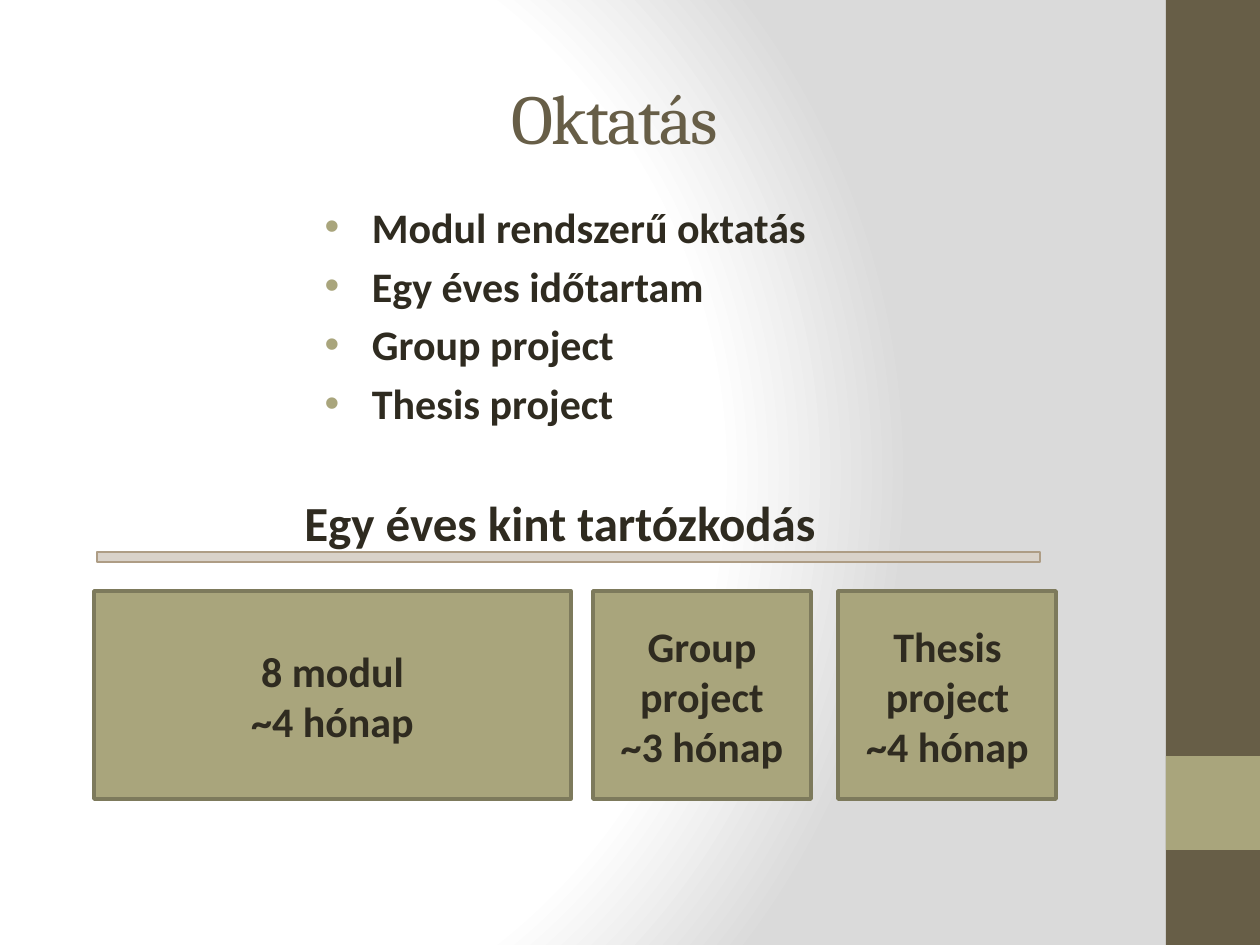
from lxml import etree
from pptx import Presentation, util as u
from pptx.dml.color import RGBColor
from pptx.enum import shapes, text
from pptx.oxml import parse_xml
from pptx.oxml.ns import nsdecls, qn

PX = 914400 / 126
HUE = {"brown": "675E47", "olive": "A9A57C", "edge": "7D7A5C", "ink": "2F2B20",
       "bar": "D9D2C9", "rim": "AE9D85", "white": "FFFFFF", "gray": "DADADA"}


def block(box, fill, line=None, width=0):
    rect = slide.shapes.add_shape(shapes.MSO_SHAPE.RECTANGLE, *[round(v * PX) for v in box])
    rect.shadow.inherit = False
    rect.fill.solid()
    rect.fill.fore_color.rgb = RGBColor.from_string(HUE[fill])
    if line:
        rect.line.color.rgb = RGBColor.from_string(HUE[line])
        rect.line.width = u.Pt(width)
    else:
        rect.line.fill.background()


def write(shape, box, lines, size, align, face="Calibri", hue="ink", bold=True):
    shape.left, shape.top, shape.width, shape.height = [round(v * PX) for v in box]
    frame = shape.text_frame
    frame.word_wrap = True
    for i, line in enumerate(lines):
        para = frame.paragraphs[0] if i == 0 else frame.add_paragraph()
        para.alignment = align
        run = para.add_run()
        run.text = line
        font = run.font
        font.name, font.size, font.bold = face, u.Pt(size), bold
        font.color.rgb = RGBColor.from_string(HUE[hue])
    return frame


deck = Presentation()
deck.slide_width, deck.slide_height = round(1260 * PX), round(945 * PX)
slide = deck.slides.add_slide(deck.slide_layouts[0])
left, mid = text.PP_ALIGN.LEFT, text.PP_ALIGN.CENTER

stops = "".join(f'<a:gs pos="{pos}"><a:srgbClr val="{HUE[hue]}"/></a:gs>'
                for pos, hue in ((0, "white"), (75000, "white"), (100000, "gray")))
slide.background.fill.solid()
back = slide.background.fill._xPr
back.replace(back.find(qn("a:solidFill")), parse_xml(
    f'<a:gradFill {nsdecls("a")} rotWithShape="1"><a:gsLst>{stops}</a:gsLst>'
    '<a:path path="circle"><a:fillToRect l="20000" t="50000" r="100000" b="50000"/></a:path>'
    '</a:gradFill>'))

title, body = slide.placeholders
frame = write(title, (95, 37, 1039, 128), ["Oktatás"], 40, mid, "Cambria", "brown", False)
frame.vertical_anchor = text.MSO_ANCHOR.BOTTOM
frame.auto_size = text.MSO_AUTO_SIZE.NONE
frame.paragraphs[0].runs[0].font._element.set("spc", "-100")

items = ["Modul rendszerű oktatás", "Egy éves időtartam", "Group project", "Thesis project"]
frame = write(body, (312, 195, 645, 277), items, 24, left)
frame.auto_size = text.MSO_AUTO_SIZE.NONE
for para in frame.paragraphs:
    para.space_before = u.Pt(4.8)
    props = para._p.get_or_add_pPr()
    props.set("marL", "342900")
    props.set("indent", "-342900")
    tint = etree.SubElement(props, qn("a:buClr"))
    etree.SubElement(tint, qn("a:srgbClr"), val=HUE["olive"])
    etree.SubElement(props, qn("a:buFont"), typeface="Arial")
    etree.SubElement(props, qn("a:buChar"), char="•")

block((1166, 0, 94, 945), "brown")
block((1166, 756, 94, 94), "olive")
for x, wide in ((94, 477), (593, 218), (838, 218)):
    block((x, 591, wide, 208), "olive", "edge", 2)
block((97, 552, 943, 10), "bar", "rim", 1)

labels = [
    ((292, 486, 667, 72), ["Egy éves kint tartózkodás"], 28, left),
    ((238, 639, 189, 115), ["8 modul", "~4 hónap"], 24, mid),
    ((588, 614, 228, 165), ["Group project", "~3 hónap"], 24, mid),
    ((832, 614, 231, 165), ["Thesis project", "~4 hónap"], 24, mid),
]
for box, lines, size, align in labels:
    label = slide.shapes.add_textbox(0, 0, 0, 0)
    frame = write(label, box, lines, size, align)
    frame.auto_size = text.MSO_AUTO_SIZE.SHAPE_TO_FIT_TEXT
    frame.word_wrap = lines[0] != "8 modul"

deck.save("out.pptx")
